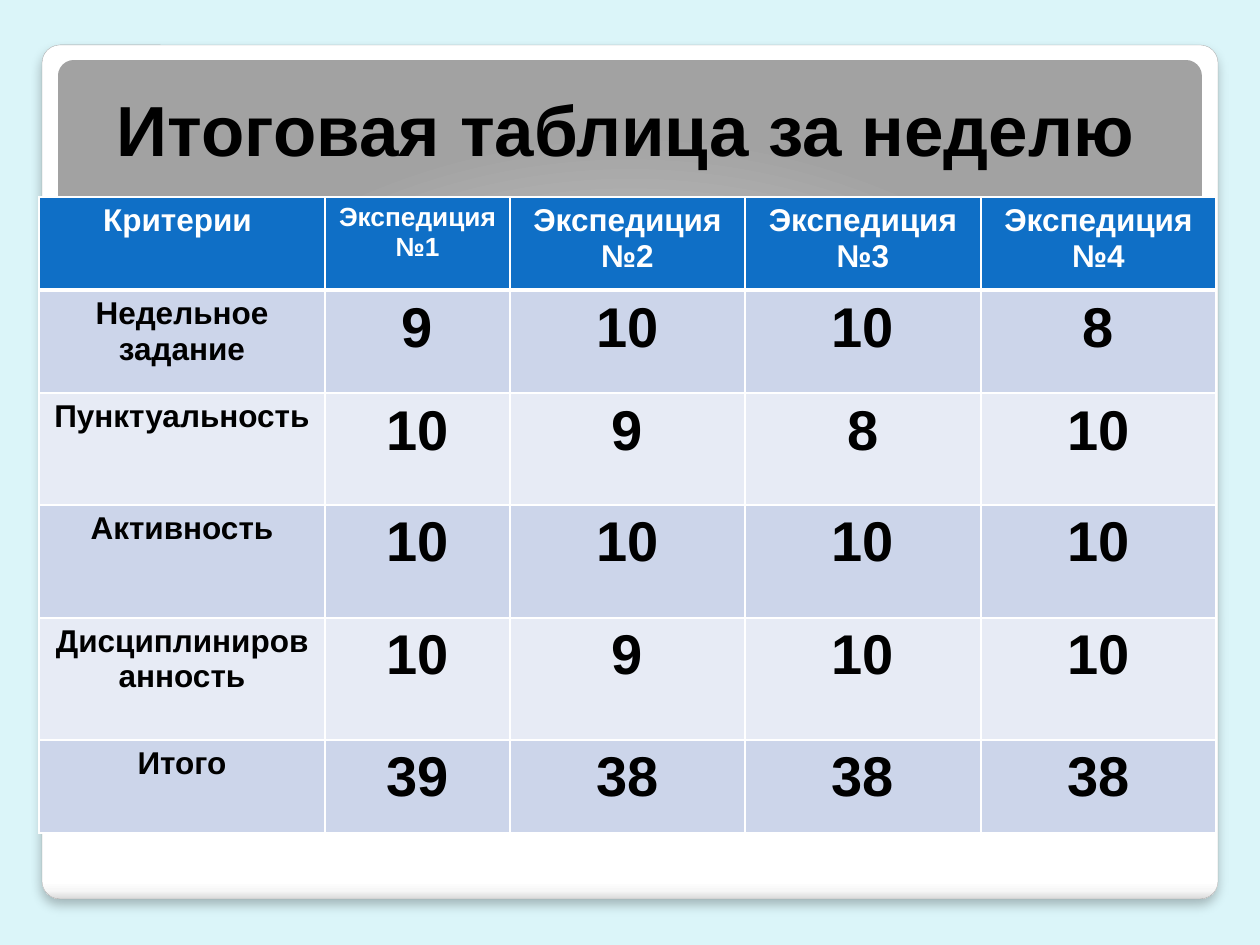
from dataclasses import dataclass

from lxml import etree
from pptx import Presentation, util as u
from pptx.dml.color import RGBColor
from pptx.enum import shapes, text
from pptx.oxml import ns

PX = u.Inches(1) / 126


def px(length):
    return u.Emu(round(length * PX))


@dataclass(frozen=True)
class Theme:
    font: str = "Arial"
    background: str = "DBF5F9"
    ink: str = "000000"
    white: str = "FFFFFF"
    outline: str = "A4A4A4"
    header: str = "0F6FC6"
    bands: tuple = ("CCD5EA", "E7EBF5")
    frame_stops: tuple = ((0, "FFFFFF"), (98, "FFFFFF"), (99, "F7F7F7"), (100, "DADADA"))
    banner_stops: tuple = ((0, "FFFFFF"), (55, "E1E1E1"), (100, "A2A2A2"))
    title_size: float = 40.5
    label_size: float = 18
    narrow_size: float = 15
    score_size: float = 32
    grid_width: float = 1
    header_rule: float = 3


def add_xml(parent, tag, **attributes):
    values = {name: str(value) for name, value in attributes.items()}
    return etree.SubElement(parent, ns.qn(tag), values)


def write(frame, words, *, size, color, font, bold=True):
    paragraph = frame.paragraphs[0]
    paragraph.alignment = text.PP_ALIGN.CENTER
    run = paragraph.add_run()
    run.text = words
    run.font.name = font
    run.font.size = u.Pt(size)
    run.font.bold = bold
    run.font.color.rgb = RGBColor.from_string(color)


class SlideBuilder:
    def __init__(self, slide, theme):
        self.slide = slide
        self.theme = theme

    def background(self):
        fill = self.slide.background.fill
        fill.solid()
        fill.fore_color.rgb = RGBColor.from_string(self.theme.background)

    def panel(self, left, top, width, height, stops, circular=False):
        """Add a rounded panel with a vertical or a circular gradient."""
        panel = self.slide.shapes.add_shape(
            shapes.MSO_SHAPE.ROUNDED_RECTANGLE, *map(px, (left, top, width, height)))
        panel.adjustments[0] = 0.021
        panel.shadow.inherit = False
        panel.line.fill.background()

        properties = panel.element.spPr
        gradient = add_xml(properties, "a:gradFill", rotWithShape=1)
        properties.find(ns.qn("a:prstGeom")).addnext(gradient)
        stop_list = add_xml(gradient, "a:gsLst")
        for position, color in stops:
            stop = add_xml(stop_list, "a:gs", pos=position * 1000)
            add_xml(stop, "a:srgbClr", val=color)
        if circular:
            path = add_xml(gradient, "a:path", path="circle")
            add_xml(path, "a:fillToRect", l=50000, t=175000, r=50000, b=-75000)
        else:
            add_xml(gradient, "a:lin", ang=5400000, scaled=0)
        return panel

    def frame(self, left, top, width, height):
        """Add the outlined white panel with its soft shadow."""
        frame = self.panel(left, top, width, height, self.theme.frame_stops)
        frame.line.color.rgb = RGBColor.from_string(self.theme.outline)
        frame.line.width = u.Pt(0.16)
        effects = frame.element.spPr.find(ns.qn("a:effectLst"))
        shadow = add_xml(effects, "a:outerShdw", blurRad=u.Pt(6), dist=u.Pt(4),
                         dir=5400000, algn="t", rotWithShape=0)
        add_xml(add_xml(shadow, "a:srgbClr", val=self.theme.ink), "a:alpha", val=25000)

    def title(self, words, left, top, width, height):
        box = self.slide.shapes.add_textbox(*map(px, (left, top, width, height)))
        box.text_frame.word_wrap = True
        box.text_frame.vertical_anchor = text.MSO_ANCHOR.BOTTOM
        write(box.text_frame, words, size=self.theme.title_size,
              color=self.theme.ink, font=self.theme.font)

    def borders(self, cell, top, bottom):
        grid = self.theme.grid_width
        properties = cell._tc.get_or_add_tcPr()
        for side, width in (("L", grid), ("R", grid), ("T", top), ("B", bottom)):
            line = add_xml(properties, f"a:ln{side}", w=u.Pt(width))
            add_xml(add_xml(line, "a:solidFill"), "a:srgbClr", val=self.theme.white)

    def cell(self, cell, words, row, column):
        theme = self.theme
        rule, grid = theme.header_rule, theme.grid_width
        self.borders(cell, top=rule if row == 1 else grid, bottom=rule if row == 0 else grid)
        cell.fill.solid()
        fill = theme.bands[(row - 1) % 2] if row else theme.header
        cell.fill.fore_color.rgb = RGBColor.from_string(fill)
        if row and column:
            size = theme.score_size
        elif (row, column) == (0, 1):
            size = theme.narrow_size
        else:
            size = theme.label_size
        write(cell.text_frame, words, size=size, font=theme.font,
              color=theme.ink if row else theme.white)

    def table(self, rows, left, top, widths, heights):
        table = self.slide.shapes.add_table(
            len(rows), len(widths), px(left), px(top),
            px(sum(widths)), px(sum(heights))).table
        for column, width in zip(table.columns, widths):
            column.width = px(width)
        for row, height in zip(table.rows, heights):
            row.height = px(height)
        for row, values in enumerate(rows):
            for column, value in enumerate(values):
                self.cell(table.cell(row, column), str(value), row, column)


SCORES = [
    ("Критерии ", *(f"Экспедиция №{number}" for number in range(1, 5))),
    ("Недельное задание", 9, 10, 10, 8),
    ("Пунктуальность", 10, 9, 8, 10),
    ("Активность", 10, 10, 10, 10),
    ("Дисциплинированность", 10, 9, 10, 10),
    ("Итого", 39, 38, 38, 38),
]


def main():
    deck = Presentation()
    deck.slide_width, deck.slide_height = px(1260), px(945)
    theme = Theme()
    builder = SlideBuilder(deck.slides.add_slide(deck.slide_layouts[6]), theme)
    builder.background()
    builder.frame(42, 45, 1176, 854)
    builder.panel(58, 60, 1144, 756, theme.banner_stops, circular=True)
    builder.title("Итоговая таблица за неделю", 59, 20, 1134, 157)
    builder.table(SCORES, 39, 197, widths=[286, 185, 235, 236, 235],
                  heights=[93, 103, 112, 113, 122, 93])
    deck.save("out.pptx")


if __name__ == "__main__":
    main()
